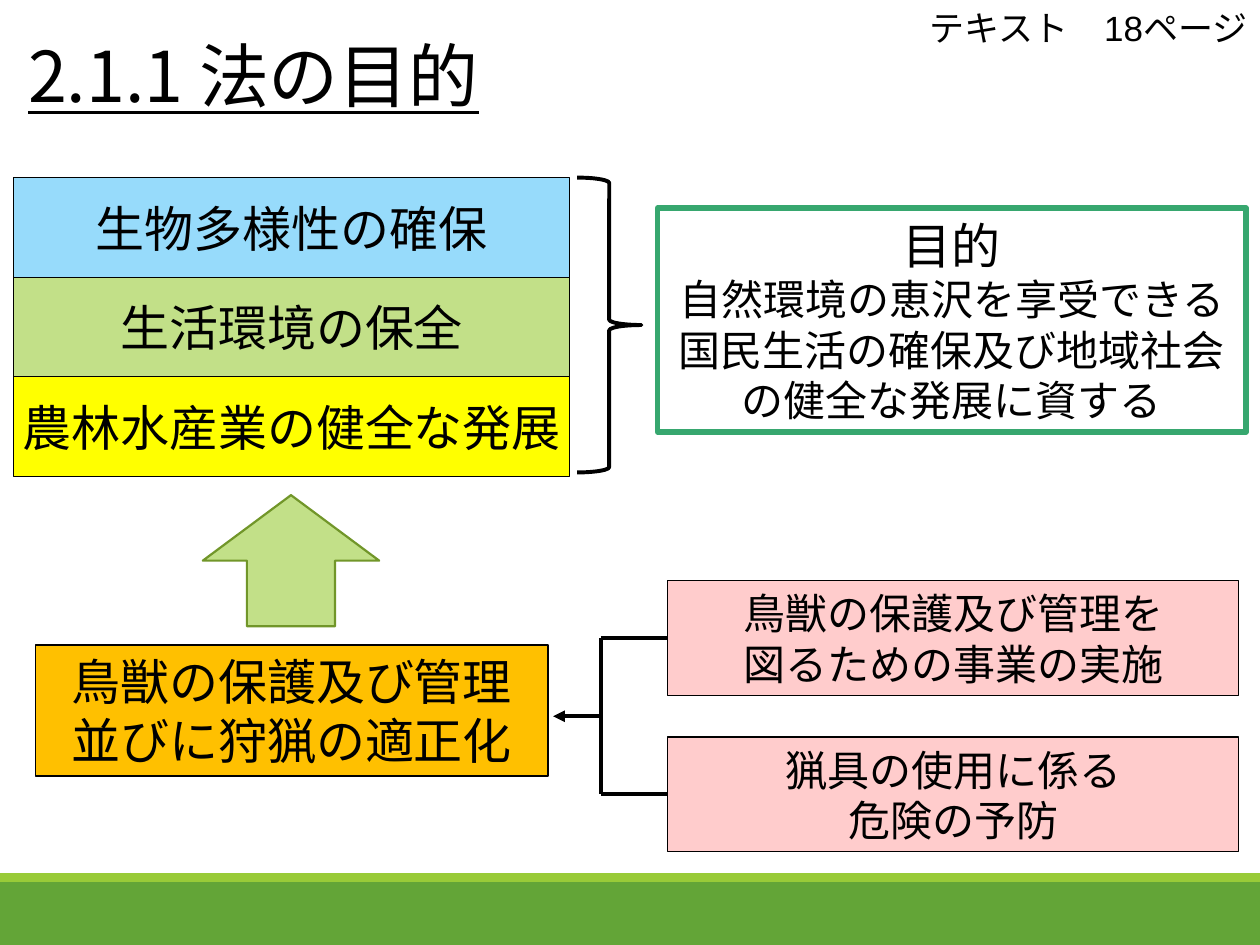
from lxml.etree import SubElement
from pptx import Presentation
from pptx.dml.color import RGBColor
from pptx.enum.shapes import MSO_CONNECTOR as Connector, MSO_SHAPE as Shape
from pptx.enum.text import MSO_ANCHOR as Anchor, PP_ALIGN as Align
from pptx.oxml.ns import qn
from pptx.util import Inches, Pt

BLACK = RGBColor(0, 0, 0)
WHITE = RGBColor(255, 255, 255)
BAND = RGBColor(0x63, 0xA5, 0x37)
BAND_EDGE = RGBColor(0x99, 0xCB, 0x38)
SKY = RGBColor(0x97, 0xDB, 0xFB)
LEAF = RGBColor(0xC2, 0xE0, 0x88)
LEAF_EDGE = RGBColor(0x71, 0x96, 0x29)
YELLOW = RGBColor(255, 255, 0)
ORANGE = RGBColor(255, 0xC0, 0)
PINK = RGBColor(255, 0xCC, 0xCC)
FRAME = RGBColor(0x37, 0xA7, 0x6F)
JAPANESE = "Noto Sans CJK JP"

TITLE = "2.1.1 法の目的"
PAGE_REFERENCE = "テキスト　18ページ"
GOALS = [("生物多様性の確保", SKY), ("生活環境の保全", LEAF), ("農林水産業の健全な発展", YELLOW)]
PURPOSE = [("目的", 28), ("自然環境の恵沢を享受できる国民生活の確保及び地域社会の健全な発展に資する", 24)]
REGULATION = ["鳥獣の保護及び管理", "並びに狩猟の適正化"]
MEASURES = [["鳥獣の保護及び管理を", "図るための事業の実施"], ["猟具の使用に係る", "危険の予防"]]

WIDTH, HEIGHT = 10, 7.5
BAND_TOP, EDGE_HEIGHT = 7, 0.07
GOAL_LEFT, GOAL_TOP, GOAL_WIDTH, GOAL_HEIGHT = 0.11, 1.41, 4.41, 0.79
MEASURE_LEFT, MEASURE_TOP, MEASURE_WIDTH, MEASURE_HEIGHT = 5.3, 4.61, 4.53, 0.91
MEASURE_PITCH = 1.24
TRUNK_X, ARROW_TIP_X = 4.77, 4.39

deck = Presentation()
deck.slide_width, deck.slide_height = Inches(WIDTH), Inches(HEIGHT)
slide = deck.slides.add_slide(deck.slide_layouts[6])


def apply(target, formats):
    for name, value in formats.items():
        setattr(target, name, value)


def add_run(paragraph, text, size, latin=JAPANESE, underline=None):
    run = paragraph.add_run()
    run.text = text
    apply(run.font, {"size": Pt(size), "name": latin, "underline": underline})
    run.font.color.rgb = BLACK
    SubElement(run.font._element, qn("a:ea"), typeface=JAPANESE)


def add_figure(kind, place, fill=None, edge=None, weight=0.75):
    figure = slide.shapes.add_shape(kind, *map(Inches, place))
    figure.shadow.inherit = False
    if fill is None:
        figure.fill.background()
    else:
        figure.fill.solid()
        figure.fill.fore_color.rgb = fill
    if edge is None:
        figure.line.fill.background()
    else:
        figure.line.color.rgb = edge
        figure.line.width = Pt(weight)
    return figure


def add_panel(place, lines, fill, edge=BLACK, weight=0.75, wrap=True):
    panel = add_figure(Shape.RECTANGLE, place, fill, edge, weight)
    frame = panel.text_frame
    apply(frame, {"word_wrap": wrap, "vertical_anchor": Anchor.MIDDLE})
    for index, (text, size) in enumerate(lines):
        paragraph = frame.add_paragraph() if index else frame.paragraphs[0]
        paragraph.alignment = Align.CENTER
        add_run(paragraph, text, size)
    return panel


def add_line(start, end, arrow=False):
    line = slide.shapes.add_connector(Connector.STRAIGHT, *map(Inches, start + end))
    line.line.color.rgb = BLACK
    line.line.width = Pt(2.25)
    if arrow:
        SubElement(line.line._get_or_add_ln(), qn("a:tailEnd"), type="triangle")
    SubElement(line._element.spPr, qn("a:effectLst"))
    return line


def add_caption(place, paragraph_formats, frame_formats):
    frame = slide.shapes.add_textbox(*map(Inches, place)).text_frame
    apply(frame, {"word_wrap": True, **frame_formats})
    apply(frame.paragraphs[0], paragraph_formats)
    return frame.paragraphs[0]


add_figure(Shape.RECTANGLE, (0, BAND_TOP, WIDTH, HEIGHT - BAND_TOP), BAND)
add_figure(Shape.RECTANGLE, (0, BAND_TOP - EDGE_HEIGHT, WIDTH, EDGE_HEIGHT), BAND_EDGE)

title = add_caption((0, 0.33, 9.15, 0.81), {"line_spacing": 0.9}, {"margin_top": 0})
add_run(title, " ", 40)
add_run(title, TITLE, 40, underline=True)
reference = add_caption((7.05, 0, 2.95, 0.44), {"alignment": Align.RIGHT}, {})
add_run(reference, PAGE_REFERENCE, 20, latin="Arial")

for row, (goal, color) in enumerate(GOALS):
    place = (GOAL_LEFT, GOAL_TOP + row * GOAL_HEIGHT, GOAL_WIDTH, GOAL_HEIGHT)
    add_panel(place, [(goal, 28)], color, wrap=False)
add_figure(Shape.RIGHT_BRACE, (4.58, GOAL_TOP, 0.51, 2.34), edge=BLACK, weight=2.25)
add_panel((5.22, 1.65, 4.67, 1.78), PURPOSE, WHITE, FRAME, 3)

add_panel((0.28, 5.12, 4.07, 1.04), [(text, 28) for text in REGULATION], ORANGE)
add_figure(Shape.UP_ARROW, (1.61, 3.93, 1.4, 1.04), LEAF, LEAF_EDGE, 1.25)

branch_levels = []
for row, measure in enumerate(MEASURES):
    top = MEASURE_TOP + row * MEASURE_PITCH
    place = (MEASURE_LEFT, top, MEASURE_WIDTH, MEASURE_HEIGHT)
    panel = add_panel(place, [(text, 24) for text in measure], PINK, wrap=False)
    level = top + MEASURE_HEIGHT / 2
    branch = add_line((TRUNK_X, level), (MEASURE_LEFT, level))
    branch.end_connect(panel, 1)
    branch_levels.append(level)

add_line((TRUNK_X, branch_levels[0]), (TRUNK_X, branch_levels[-1]))
middle = sum(branch_levels) / len(branch_levels)
add_line((TRUNK_X, middle), (ARROW_TIP_X, middle), arrow=True)

deck.save("out.pptx")
